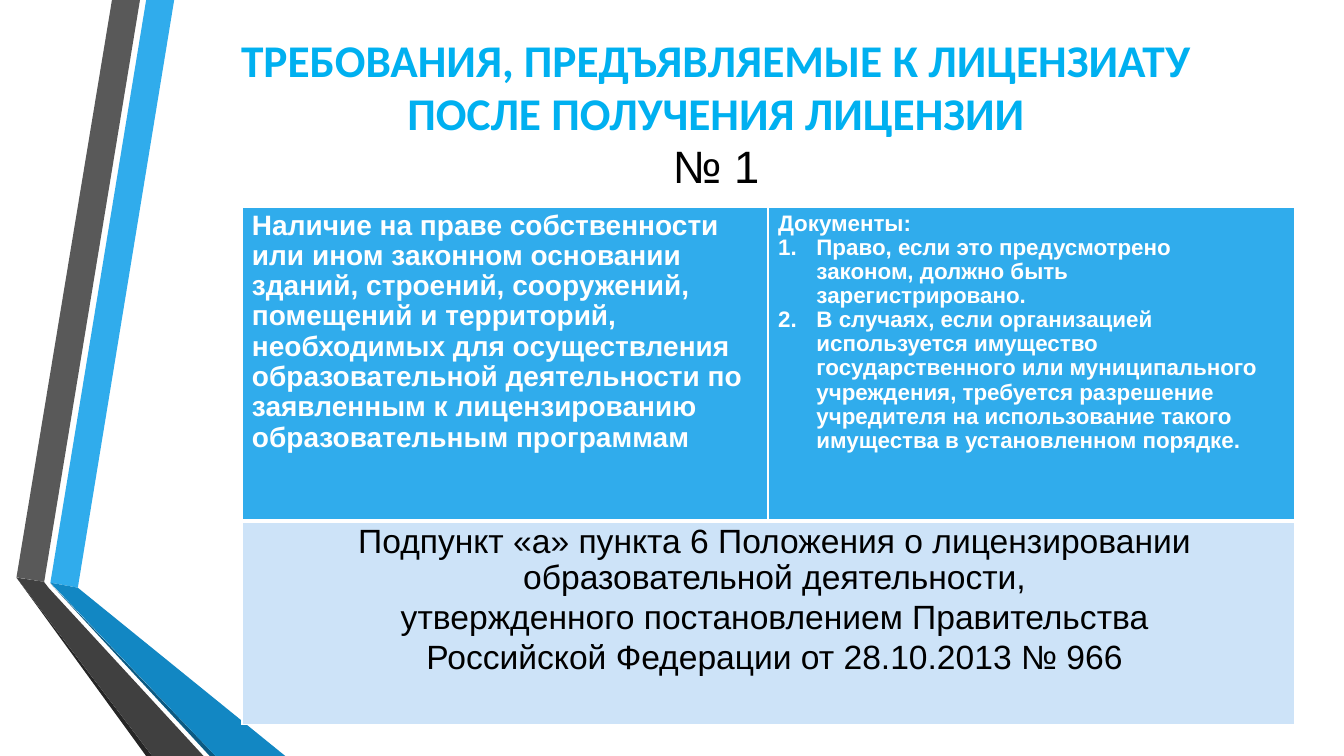
from dataclasses import dataclass

from lxml.etree import SubElement
from pptx import Presentation
from pptx.dml.color import RGBColor as Rgb
from pptx.enum.text import MSO_ANCHOR as Anchor, MSO_AUTO_SIZE as AutoSize, PP_ALIGN as Align
from pptx.oxml import parse_xml
from pptx.oxml.ns import nsdecls, qn
from pptx.util import Pt


@dataclass(frozen=True)
class Theme:
    """Colours, fonts and type sizes of the slide."""
    blue: str = "30ACEC"
    deep_blue: str = "1287C3"
    navy: str = "0C5A82"
    grey: str = "595959"
    dark_grey: str = "404040"
    charcoal: str = "262626"
    title: str = "00B0F0"
    pale: str = "CDE3F8"
    white: str = "FFFFFF"
    black: str = "000000"
    body_font: str = "Arial"
    title_font: str = "Calibri"
    title_size: float = 32.4
    lead_size: float = 20
    list_size: float = 16
    basis_size: float = 24
    leading: float = 0.97


THEME = Theme()
SLIDE = (960, 540)
TITLE_BOX = (116.6, 6.5, 789.1, 151.2)
TITLE_LINES = ["ТРЕБОВАНИЯ, ПРЕДЪЯВЛЯЕМЫЕ К ЛИЦЕНЗИАТУ", "ПОСЛЕ ПОЛУЧЕНИЯ ЛИЦЕНЗИИ"]
TITLE_NUMBER = "№ 1"

RIBBONS = [
    (THEME.blue, [(36, 416.2), (55.6, 419.8), (124.4, 0), (104.4, 0)]),
    (THEME.grey, [(100, 0), (80, 0), (11.8, 412.4), (31.6, 415.6)]),
    (THEME.charcoal, [(11.8, 412.6), (104.4, 540), (108.7, 540)]),
    (THEME.navy, [(36, 416.8), (149.8, 540), (154, 540)]),
    (THEME.deep_blue, [(36, 416.2), (154, 540), (203.8, 540), (55.6, 419.8)]),
    (THEME.dark_grey, [(145.4, 540), (34.6, 419.8), (31.4, 415.6), (11.8, 412.6), (108.7, 540)]),
]

TABLE_AT = (172.8, 148.4)
COLUMN = 375.8
ROWS = (223.9, 145.4)

LEAD = [
    ("Наличие на праве собственности или ином законном основании зданий, строений, "
     "сооружений, помещений и территорий,", {"before": 2.4}),
    ("необходимых для осуществления образовательной деятельности по заявленным "
     "к лицензированию образовательным программам", {}),
]
DOCUMENTS = [
    ("Документы:", {"before": 2.6}),
    ("Право, если это предусмотрено законом, должно быть", {"left": 34.6, "number": 1}),
    ("зарегистрировано.", {"left": 34.6}),
    ("В случаях, если организацией используется имущество", {"left": 34.6, "number": 2}),
    ("государственного или муниципального учреждения, требуется разрешение", {"left": 34.6}),
    ("учредителя на использование такого имущества в установленном порядке.", {"left": 34.6}),
]
BASIS = [
    ("Подпункт «а» пункта 6 Положения о лицензировании образовательной деятельности,", {}),
    ("утвержденного постановлением Правительства", {}),
    ("Российской Федерации от 28.10.2013 № 966", {}),
]


def add_span(para, text, *, size, color, font=THEME.body_font, bold=False):
    """Add one formatted run to a paragraph."""
    span = para.add_run()
    span.text = text
    span.font.size = Pt(size)
    span.font.name = font
    span.font.bold = bold
    span.font.color.rgb = Rgb.from_string(color)


def format_para(para, *, align=Align.LEFT, before=0, left=7.2, number=None):
    """Set alignment, spacing, indent and optional numbering."""
    para.alignment = align
    para.line_spacing = THEME.leading
    para.space_before = Pt(before)
    props = para._p.get_or_add_pPr()
    props.set("marL", str(Pt(left)))
    props.set("indent", str(Pt(-27.4 if number else 0)))
    if number:
        SubElement(props, qn("a:buAutoNum"), type="arabicPeriod", startAt=str(number))


def add_title(page):
    """Fill and place the title placeholder."""
    title = page.shapes.title
    title.left, title.top, title.width, title.height = map(Pt, TITLE_BOX)
    frame = title.text_frame
    frame.word_wrap = True
    frame.auto_size = AutoSize.NONE
    frame.vertical_anchor = Anchor.MIDDLE
    para = frame.paragraphs[0]
    format_para(para, align=Align.CENTER, before=1.1, left=0.7)
    for line in TITLE_LINES:
        add_span(para, line, size=THEME.title_size, color=THEME.title,
                 font=THEME.title_font, bold=True)
        para.add_line_break()
    add_span(para, TITLE_NUMBER, size=THEME.title_size, color=THEME.black)


def add_ribbon(page, color, points):
    """Draw one filled ribbon outline."""
    start, *rest = [(Pt(x), Pt(y)) for x, y in points]
    builder = page.shapes.build_freeform(*start)
    builder.add_line_segments(rest, close=True)
    ribbon = builder.convert_to_shape()
    ribbon.shadow.inherit = False
    ribbon.fill.solid()
    ribbon.fill.fore_color.rgb = Rgb.from_string(color)
    ribbon.line.fill.background()


def style_cell(cell, fill, bottom=1):
    """Fill a cell and give it white borders."""
    cell.fill.solid()
    cell.fill.fore_color.rgb = Rgb.from_string(fill)
    props = cell._tc.get_or_add_tcPr()
    for place, (side, width) in enumerate(zip("LRTB", (1, 1, 1, bottom))):
        props.insert(place, parse_xml(
            f'<a:ln{side} {nsdecls("a")} w="{Pt(width)}"><a:solidFill>'
            f'<a:srgbClr val="{THEME.white}"/></a:solidFill></a:ln{side}>'))


def fill_cell(cell, content, *, size, color, bold=False, right=0, top=2.2, **common):
    """Write a list of paragraphs into a cell."""
    cell.margin_left, cell.margin_top, cell.margin_right, cell.margin_bottom = map(
        Pt, (0, top, right, 0))
    frame = cell.text_frame
    for index, (text, options) in enumerate(content):
        para = frame.add_paragraph() if index else frame.paragraphs[0]
        format_para(para, **{**common, **options})
        add_span(para, text, size=size, color=color, bold=bold)


def add_requirements(page):
    """Add the table of requirements and their legal basis."""
    frame = page.shapes.add_table(2, 2, *map(Pt, (*TABLE_AT, 2 * COLUMN, sum(ROWS))))
    table = frame.table
    table.first_row = table.horz_banding = False
    for column in table.columns:
        column.width = Pt(COLUMN)
    for row, height, fill, bottom in zip(table.rows, ROWS, (THEME.blue, THEME.pale), (3, 1)):
        row.height = Pt(height)
        for cell in row.cells:
            style_cell(cell, fill, bottom)
    table.cell(1, 0).merge(table.cell(1, 1))
    fill_cell(table.cell(0, 0), LEAD, size=THEME.lead_size, color=THEME.white,
              bold=True, right=10)
    fill_cell(table.cell(0, 1), DOCUMENTS, size=THEME.list_size, color=THEME.white,
              bold=True, right=20, top=2.9)
    fill_cell(table.cell(1, 0), BASIS, size=THEME.basis_size, color=THEME.black,
              align=Align.CENTER, before=2.5, left=9.4)


def main():
    """Build and save the slide."""
    deck = Presentation()
    deck.slide_width, deck.slide_height = map(Pt, SLIDE)
    page = deck.slides.add_slide(deck.slide_layouts[5])
    for color, points in RIBBONS:
        add_ribbon(page, color, points)
    add_title(page)
    add_requirements(page)
    deck.save("out.pptx")


if __name__ == "__main__":
    main()
